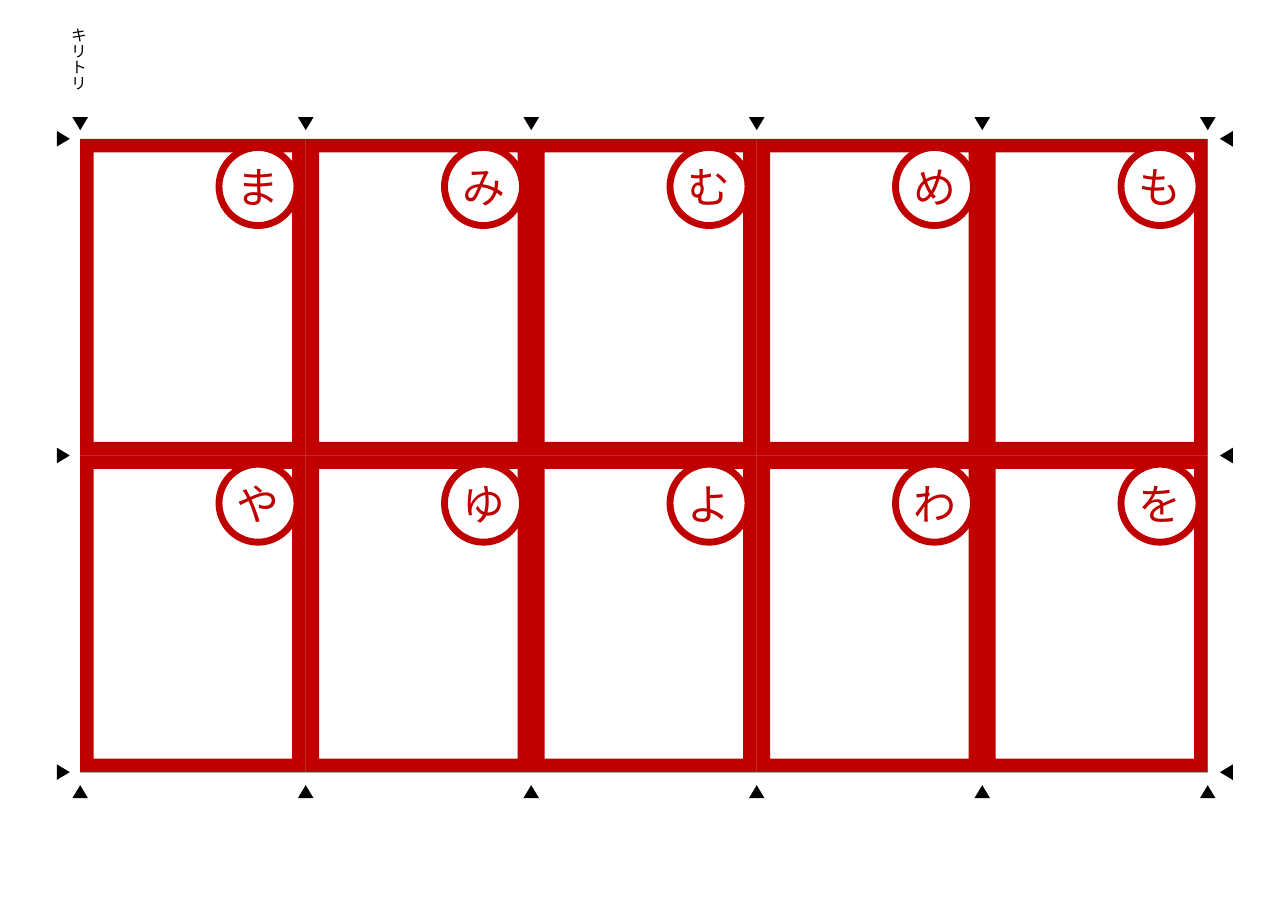
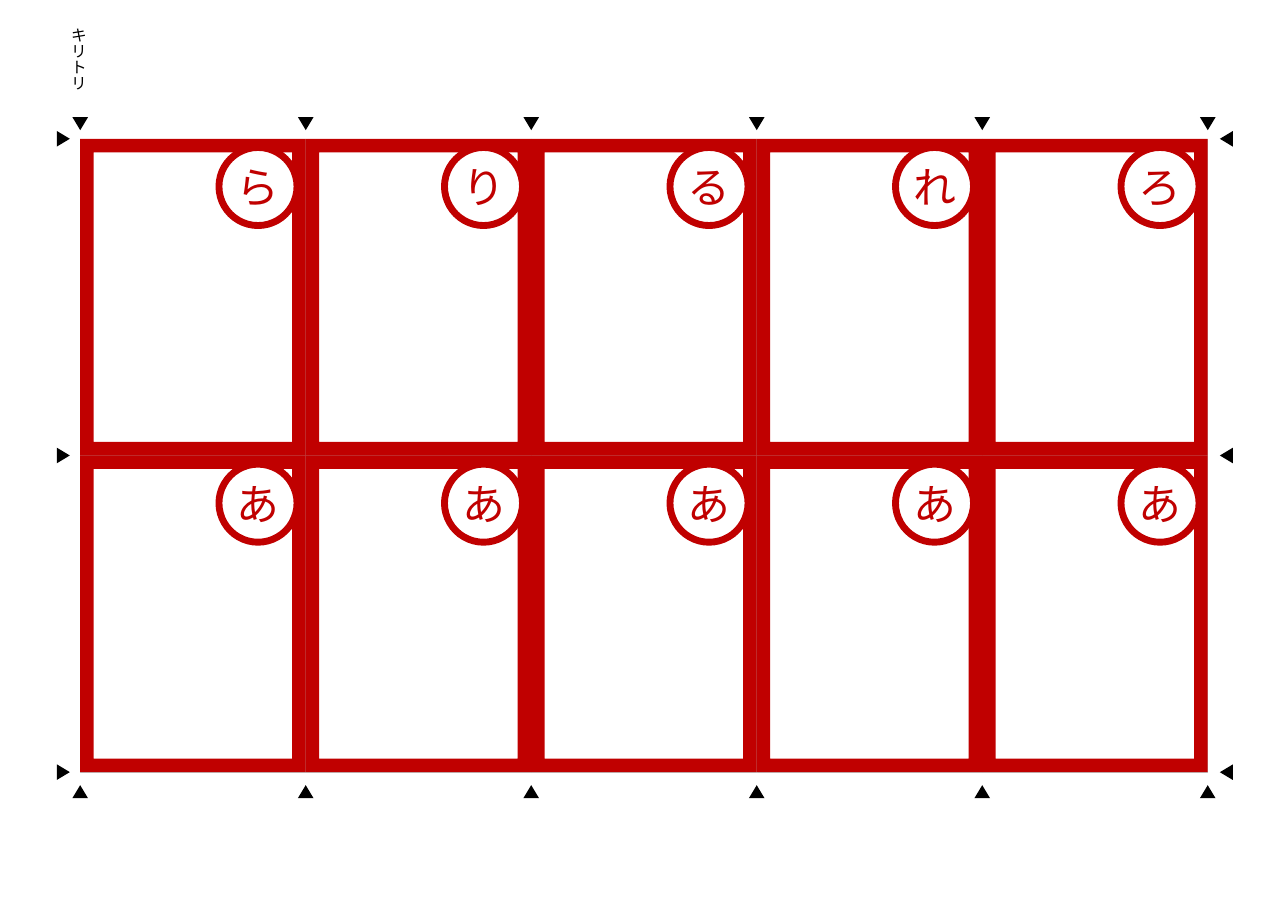
import pptx
import pptx.dml.color
import pptx.enum.shapes
import pptx.enum.text
import pptx.oxml
import pptx.oxml.ns
import pptx.util

# Content: one list of card rows per slide
SHEETS = [
    ["まみむめも", "やゆよわを"],
    ["らりるれろ", "あああああ"],
]
CUT_LABEL = "キリトリ"

# Style
FONT = "Noto Sans CJK JP"
RED, WHITE, BLACK, GREY = "C00000", "FFFFFF", "000000", "BFBFBF"

# A4 sheet in millimetres, with the card grid in its middle
SHEET_WIDTH, SHEET_HEIGHT = 297, 210
COLUMNS, ROWS = 5, 2
CARD_WIDTH, CARD_HEIGHT = 52, 73
LEFT = (SHEET_WIDTH - COLUMNS * CARD_WIDTH) / 2
TOP = (SHEET_HEIGHT - ROWS * CARD_HEIGHT) / 2
RIGHT, BOTTOM = SHEET_WIDTH - LEFT, SHEET_HEIGHT - TOP
FRAME_SHARE = 0.06
BADGE, BADGE_MARGIN = 18, 2
MARK_WIDTH, MARK_HEIGHT = 3.6, 3

CELLS = [(row, column) for row in range(ROWS) for column in range(COLUMNS)]
SHAPES = pptx.enum.shapes.MSO_SHAPE
ALIGN = pptx.enum.text.PP_ALIGN


def color(hex_value):
    return pptx.dml.color.RGBColor.from_string(hex_value)


def millimetres(*lengths):
    return [pptx.util.Mm(length) for length in lengths]


def add_shape(slide, kind, box, fill=None, line=None, line_width=0):
    shape = slide.shapes.add_shape(kind, *millimetres(*box))
    shape.shadow.inherit = False
    if fill:
        shape.fill.solid()
        shape.fill.fore_color.rgb = color(fill)
    else:
        shape.fill.background()
    if line:
        shape.line.color.rgb = color(line)
        shape.line.width = pptx.util.Pt(line_width)
    else:
        shape.line.fill.background()
    return shape


def set_text(shape, text, size, text_color, alignment):
    frame = shape.text_frame
    frame.margin_left = frame.margin_right = frame.margin_top = frame.margin_bottom = 0
    frame.vertical_anchor = pptx.enum.text.MSO_ANCHOR.MIDDLE
    frame.word_wrap = True
    frame.text = text
    paragraph = frame.paragraphs[0]
    paragraph.alignment = alignment
    font = paragraph.runs[0].font
    font.size = pptx.util.Pt(size)
    font.name = FONT
    font.color.rgb = color(text_color)
    east_asian = pptx.oxml.parse_xml(
        f'<a:ea {pptx.oxml.ns.nsdecls("a")} typeface="{FONT}"/>')
    paragraph.runs[0].font.fill  # keeps the fill ahead of the typefaces
    latin = paragraph.runs[0]._r.rPr.find(pptx.oxml.ns.qn("a:latin"))
    latin.addnext(east_asian)


def card_box(row, column):
    return (LEFT + column * CARD_WIDTH, TOP + row * CARD_HEIGHT,
            CARD_WIDTH, CARD_HEIGHT)


def add_mark(slide, center_x, center_y, rotation):
    mark = add_shape(slide, SHAPES.ISOSCELES_TRIANGLE,
                     (center_x - MARK_WIDTH / 2, center_y - MARK_HEIGHT / 2,
                      MARK_WIDTH, MARK_HEIGHT), BLACK)
    mark.rotation = rotation


def add_cutting_guides(slide):
    # Triangles at both ends of every cutting line
    for column in range(COLUMNS + 1):
        x = LEFT + column * CARD_WIDTH
        add_mark(slide, x, TOP - 3.5, 180)
        add_mark(slide, x, BOTTOM + 4.5, 0)
    for row in range(ROWS + 1):
        y = TOP + row * CARD_HEIGHT
        add_mark(slide, LEFT - 3.9, y, 90)
        add_mark(slide, RIGHT + 4.3, y, 270)

    # Vertical label above the first cutting line
    label = slide.shapes.add_textbox(*millimetres(15.4, 6.4, 5.3, 18.5))
    set_text(label, CUT_LABEL, 10.5, BLACK, ALIGN.RIGHT)
    label.text_frame.auto_size = pptx.enum.text.MSO_AUTO_SIZE.SHAPE_TO_FIT_TEXT
    label.element.txBody.bodyPr.set("vert", "eaVert")

    # Thin card outlines
    for cell in CELLS:
        add_shape(slide, SHAPES.RECTANGLE, card_box(*cell), line=GREY, line_width=0.25)


def move_to_layout(slide, layout):
    for placeholder in list(layout.placeholders):
        layout.shapes.element.remove(placeholder.element)
    for shape in list(slide.shapes):
        layout.shapes.element.append(shape.element)


def add_cards(slide, letters):
    for cell in CELLS:
        frame = add_shape(slide, SHAPES.FRAME, card_box(*cell), RED)
        frame.adjustments[0] = FRAME_SHARE
    for row, column in CELLS:
        left, top, width, height = card_box(row, column)
        badge = add_shape(slide, SHAPES.OVAL,
                          (left + width - BADGE_MARGIN - BADGE, top + BADGE_MARGIN,
                           BADGE, BADGE), WHITE, RED, 4.5)
        set_text(badge, letters[row][column], 28, RED, ALIGN.CENTER)


def main():
    presentation = pptx.Presentation()
    presentation.slide_width, presentation.slide_height = millimetres(
        SHEET_WIDTH, SHEET_HEIGHT)
    layout = presentation.slide_layouts[6]
    slides = [presentation.slides.add_slide(layout) for _ in SHEETS]

    # The guides are drawn once and shared through the layout
    add_cutting_guides(slides[0])
    move_to_layout(slides[0], layout)

    for slide, letters in zip(slides, SHEETS):
        add_cards(slide, letters)
    presentation.save("out.pptx")


if __name__ == "__main__":
    main()
